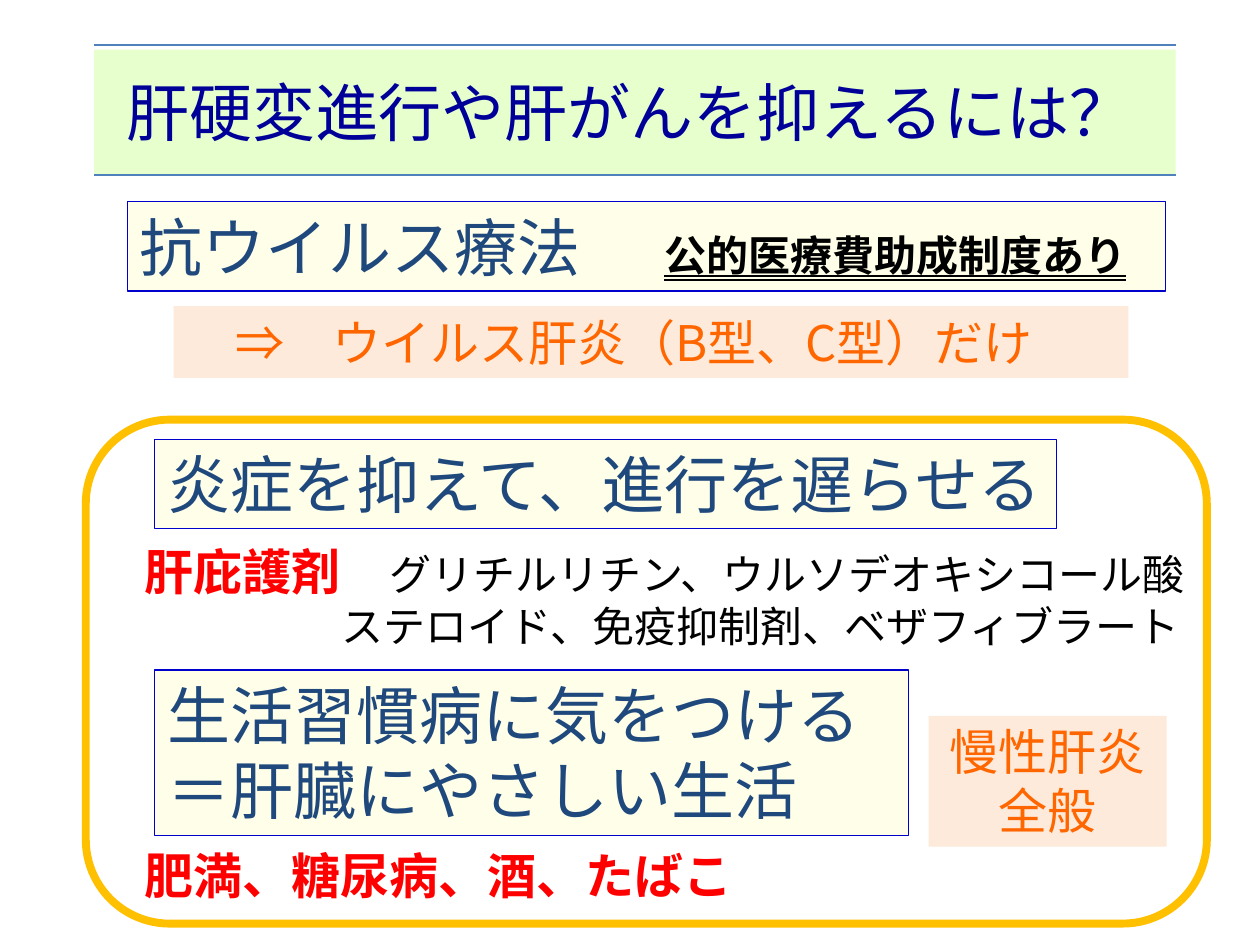
import pptx
import pptx.util
import pptx.dml.color
import pptx.enum.shapes
import pptx.enum.text
import pptx.oxml.ns
from lxml import etree

Cm, Pt = pptx.util.Cm, pptx.util.Pt
RGB = pptx.dml.color.RGBColor
SHAPE = pptx.enum.shapes.MSO_SHAPE
CENTER = pptx.enum.text.PP_ALIGN.CENTER
MIDDLE = pptx.enum.text.MSO_ANCHOR.MIDDLE
DOUBLE = pptx.enum.text.MSO_UNDERLINE.DOUBLE_LINE
qn = pptx.oxml.ns.qn

FONT = "Noto Sans CJK JP"
NAVY, BLUE, STEEL = RGB(0, 0, 0x99), RGB(0, 0, 0xCC), RGB(0x4F, 0x81, 0xBD)
SLATE, BLACK, RED = RGB(0x1F, 0x49, 0x7D), RGB(0, 0, 0), RGB(0xFF, 0, 0)
ORANGE, GOLD = RGB(0xFF, 0x66, 0), RGB(0xFF, 0xC0, 0)
CREAM, MINT, PEACH = RGB(0xFF, 0xFF, 0xE9), RGB(0xE6, 0xFF, 0xCD), RGB(0xFD, 0xEA, 0xDA)

# Text formats
TITLE = dict(size=Pt(36), color=NAVY)
HEADING = dict(size=Pt(36), color=SLATE)
SUPPORT = dict(size=Pt(24), color=BLACK, bold=True, underline=DOUBLE)
SCOPE = dict(size=Pt(28), color=ORANGE)
KEY = dict(size=Pt(28), color=RED, bold=True)
DRUG = dict(size=Pt(24), color=BLACK)

# Box formats
PLAIN = dict()
HEAD_BOX = dict(fill=CREAM, line=BLUE, width=0.75)
SCOPE_BOX = dict(fill=PEACH)
BAND = dict(fill=MINT)
FRAME = dict(shape=SHAPE.ROUNDED_RECTANGLE, line=GOLD, width=4.5)

# (left, top, width, height) in cm, box format, paragraphs of (text, format) runs,
# paragraph options
BOXES = [
    ((2.57, 4.07, 20.93, 1.8), HEAD_BOX,
     [[("抗ウイルス療法\t", HEADING), ("公的医療費助成制度あり", SUPPORT)]], dict(tab=10.57)),
    ((1.9, 1, 21.8, 2.54), BAND, [], {}),
    ((1.9, 1.19, 21.6, 2.1), PLAIN,
     [[("肝硬変進行や肝がんを抑えるには？", TITLE)]], dict(align=CENTER, anchor=MIDDLE)),
    ((3.12, 8.86, 18.18, 1.8), HEAD_BOX, [[("炎症を抑えて、進行を遅らせる", HEADING)]], {}),
    ((3.12, 13.51, 15.19, 3.33), HEAD_BOX,
     [[("生活習慣病に気をつける", HEADING)], [("＝肝臓にやさしい生活", HEADING)]], {}),
    ((2.67, 10.8, 21.67, 2.49), PLAIN,
     [[("肝庇護剤　", KEY), ("グリチルリチン、ウルソデオキシコール酸", DRUG)],
      [("ステロイド、免疫抑制剤、ベザフィブラート", DRUG)]], dict(indents=[0, 3.97])),
    ((2.67, 16.92, 16.46, 1.45), PLAIN, [[("肥満、糖尿病、酒、たばこ", KEY)]], {}),
    ((1.73, 8.46, 22.6, 10.16), FRAME, [], {}),
    ((18.72, 14.43, 4.8, 2.64), SCOPE_BOX,
     [[("慢性肝炎", SCOPE)], [("全般", SCOPE)]], dict(align=CENTER)),
    ((3.5, 6.17, 19.25, 1.45), SCOPE_BOX,
     [[("⇒　ウイルス肝炎（B型、C型）だけ", SCOPE)]], dict(indents=[0.99])),
]
RULE_LEFT, RULE_RIGHT, RULE_TOPS = 1.9, 23.7, (3.53, 0.91)


def add_run(p, text, fmt):
    r = p.add_run()
    r.text = text
    for name, value in fmt.items():
        if name == "color":
            r.font.color.rgb = value
        else:
            setattr(r.font, name, value)
    r.font.name = FONT
    etree.SubElement(r.font._element, qn("a:ea")).set("typeface", FONT)


def fill_text(tf, paragraphs, align=None, anchor=None, tab=None, indents=()):
    tf.word_wrap = True
    tf.vertical_anchor = anchor or pptx.enum.text.MSO_ANCHOR.TOP
    for i, runs in enumerate(paragraphs):
        p = tf.paragraphs[0] if i == 0 else tf.add_paragraph()
        p.alignment = align or pptx.enum.text.PP_ALIGN.LEFT
        pPr = p._p.get_or_add_pPr()
        if indents:
            pPr.set("marL", str(int(Cm(indents[i]))))
        if tab:
            tabs = etree.SubElement(pPr, qn("a:tabLst"))
            etree.SubElement(tabs, qn("a:tab"), pos=str(int(Cm(tab))), algn="l")
        for text, fmt in runs:
            add_run(p, text, fmt)


def add_box(s, place, box, paragraphs, options):
    sp = s.shapes.add_shape(box.get("shape", SHAPE.RECTANGLE), *map(Cm, place))
    sp.shadow.inherit = False
    if "fill" in box:
        sp.fill.solid()
        sp.fill.fore_color.rgb = box["fill"]
    else:
        sp.fill.background()
    if "line" in box:
        sp.line.color.rgb = box["line"]
        sp.line.width = Pt(box["width"])
    else:
        sp.line.fill.background()
    fill_text(sp.text_frame, paragraphs, **options)


def add_rule(s, top):
    line = s.shapes.add_connector(pptx.enum.shapes.MSO_CONNECTOR.STRAIGHT,
                                  Cm(RULE_LEFT), Cm(top), Cm(RULE_RIGHT), Cm(top))
    line.line.color.rgb = STEEL
    line.line.width = Pt(1.5)
    etree.SubElement(line._element.spPr, qn("a:effectLst"))


def main():
    prs = pptx.Presentation()
    prs.slide_width, prs.slide_height = Cm(25.4), Cm(19.05)
    s = prs.slides.add_slide(prs.slide_layouts[6])
    for place, box, paragraphs, options in BOXES:
        add_box(s, place, box, paragraphs, options)
        # Rules lie directly over the title band
        if box is BAND:
            for top in RULE_TOPS:
                add_rule(s, top)
    prs.save("out.pptx")


if __name__ == "__main__":
    main()
